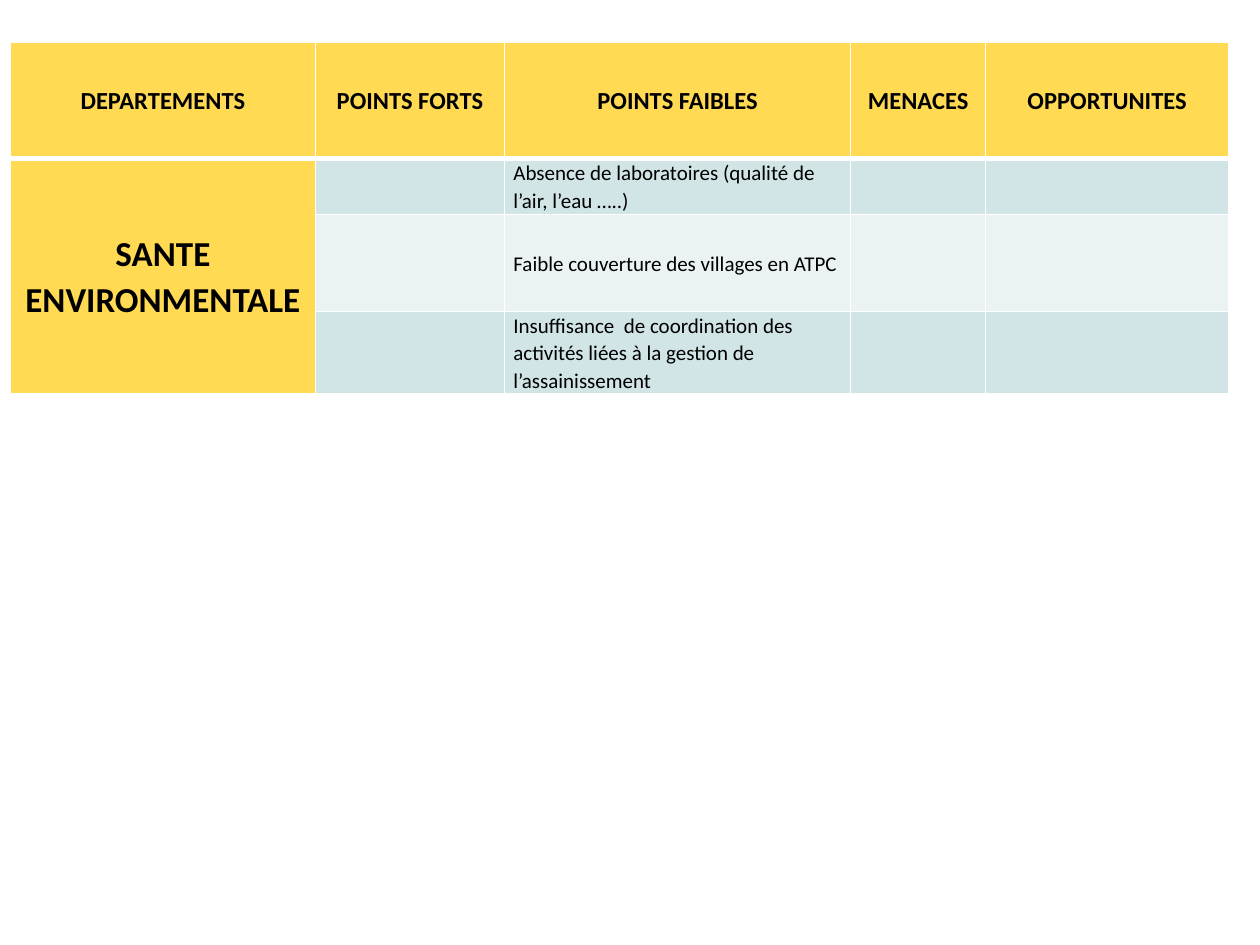
from dataclasses import dataclass

from lxml import etree
from pptx import Presentation
from pptx import util as u
from pptx.dml.color import RGBColor
from pptx.enum import text
from pptx.oxml.ns import qn

YELLOW, TEAL, PALE, WHITE, BLACK = "FFDA52", "D1E4E6", "EAF2F3", "FFFFFF", "000000"
COLUMN_WIDTHS = (6.15, 3.81, 6.98, 2.72, 4.9)
ROW_HEIGHTS = (2.34, 1.14, 1.95, 1.66)
HEADINGS = ("DEPARTEMENTS", "POINTS FORTS", "POINTS FAIBLES", "MENACES", "OPPORTUNITES")
DEPARTMENT = "SANTE ENVIRONMENTALE"
WEAKNESSES = (
    "Absence de laboratoires (qualité de l’air, l’eau\u00a0…..)",
    "Faible couverture des villages en ATPC",
    "Insuffisance  de coordination des activités liées à la gestion de l’assainissement",
)
WEAKNESS_COLUMN = 2


@dataclass(frozen=True)
class CellStyle:
    fill: str
    size: int
    bold: bool
    align: text.PP_ALIGN


HEADING = CellStyle(YELLOW, 14, True, text.PP_ALIGN.CENTER)
DEPARTMENT_NAME = CellStyle(YELLOW, 20, True, text.PP_ALIGN.CENTER)
BANDS = tuple(CellStyle(fill, 12, False, text.PP_ALIGN.LEFT) for fill in (TEAL, PALE))


def color(value: str) -> RGBColor:
    return RGBColor.from_string(value)


def add_borders(cell, top: int, bottom: int) -> None:
    """Give the cell white borders, with top and bottom widths in points."""
    properties = cell._tc.get_or_add_tcPr()
    for side, width in (("L", 1), ("R", 1), ("T", top), ("B", bottom)):
        line = etree.SubElement(properties, qn(f"a:ln{side}"), w=str(u.Pt(width)))
        fill = etree.SubElement(line, qn("a:solidFill"))
        etree.SubElement(fill, qn("a:srgbClr"), val=WHITE)


def fill_cell(table, row: int, column: int, wording: str, style: CellStyle) -> None:
    cell = table.cell(row, column)
    add_borders(cell, top=3 if row == 1 else 1, bottom=3 if row == 0 else 1)
    cell.fill.solid()
    cell.fill.fore_color.rgb = color(style.fill)
    cell.vertical_anchor = text.MSO_ANCHOR.MIDDLE
    cell.margin_left = cell.margin_right = u.Cm(0.18)
    cell.margin_top = cell.margin_bottom = 0
    if not wording:
        return
    cell.text_frame.text = wording
    para = cell.text_frame.paragraphs[0]
    para.alignment = style.align
    para.line_spacing = 1.07
    for span in para.runs:
        span.font.name = "Calibri"
        span.font.size = u.Pt(style.size)
        span.font.bold = style.bold
        span.font.color.rgb = color(BLACK)


def add_analysis_table(page) -> None:
    table = page.shapes.add_table(
        len(ROW_HEIGHTS), len(COLUMN_WIDTHS), u.Cm(0.21), u.Cm(0.85),
        u.Cm(sum(COLUMN_WIDTHS)), u.Cm(sum(ROW_HEIGHTS)),
    ).table
    for column, width in zip(table.columns, COLUMN_WIDTHS):
        column.width = u.Cm(width)
    for row, height in zip(table.rows, ROW_HEIGHTS):
        row.height = u.Cm(height)

    for column, heading in enumerate(HEADINGS):
        fill_cell(table, 0, column, heading, HEADING)
    for row, weakness in enumerate(WEAKNESSES, start=1):
        fill_cell(table, row, 0, DEPARTMENT if row == 1 else "", DEPARTMENT_NAME)
        for column in range(1, len(HEADINGS)):
            wording = weakness if column == WEAKNESS_COLUMN else ""
            fill_cell(table, row, column, wording, BANDS[(row - 1) % 2])
    table.cell(1, 0).merge(table.cell(len(WEAKNESSES), 0))


def main() -> None:
    deck = Presentation()
    deck.slide_width, deck.slide_height = u.Cm(25.4), u.Cm(19.05)
    page = deck.slides.add_slide(deck.slide_layouts[6])
    add_analysis_table(page)
    deck.save("out.pptx")


if __name__ == "__main__":
    main()
